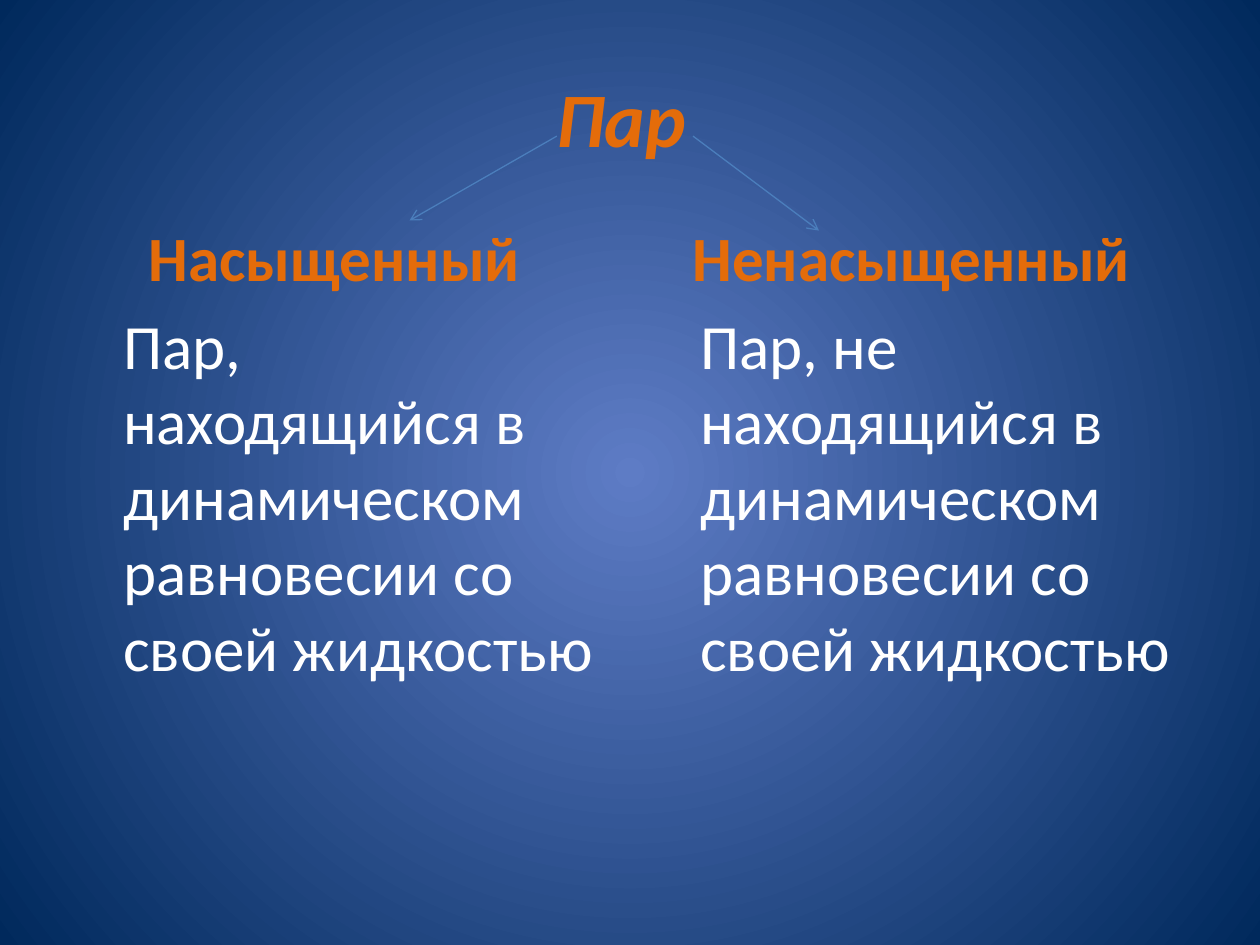
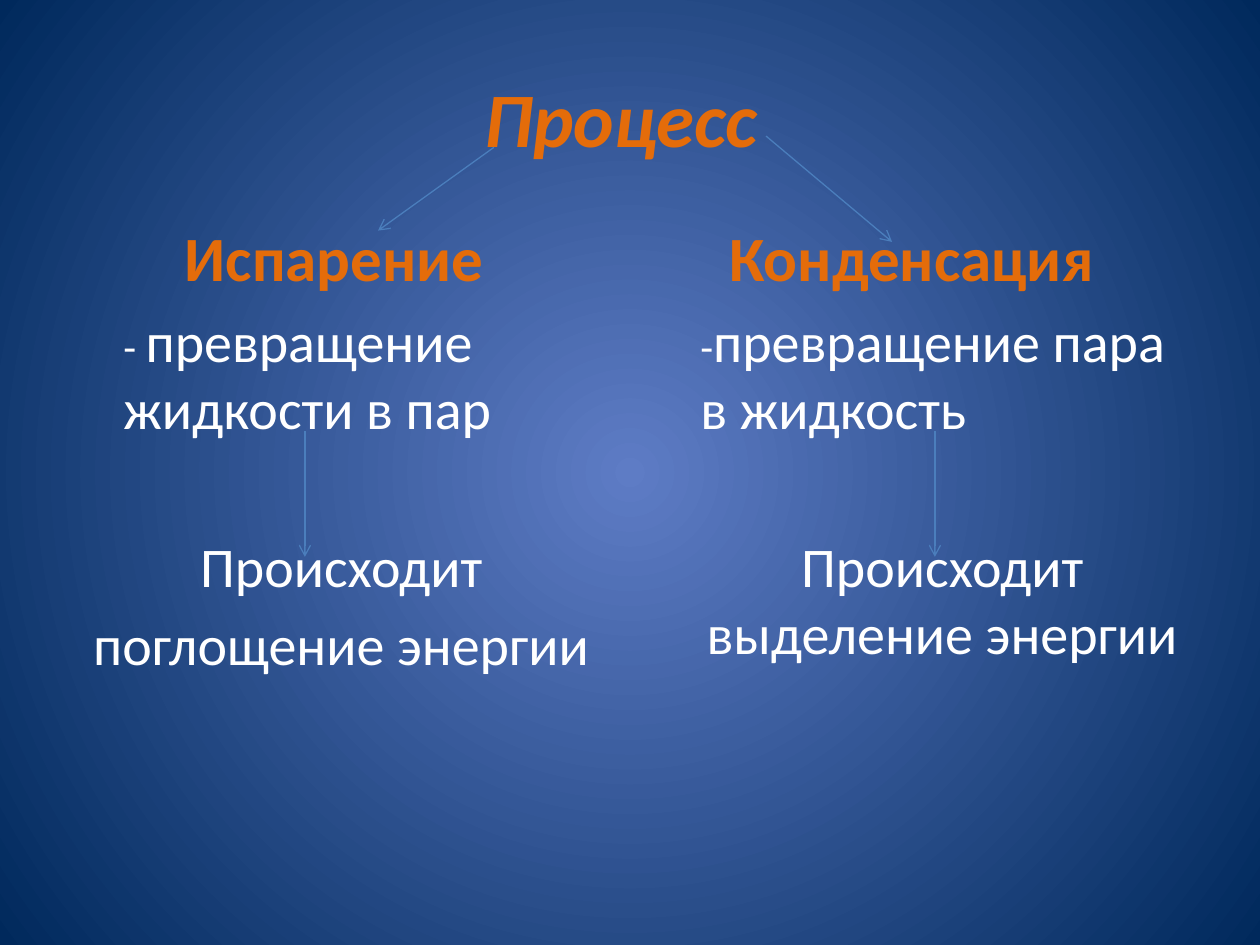
from dataclasses import dataclass

import lxml.etree
import pptx
import pptx.dml.color
import pptx.enum.shapes
import pptx.enum.text
import pptx.oxml.ns
import pptx.util

Inches = pptx.util.Inches
Pt = pptx.util.Pt
qn = pptx.oxml.ns.qn
ALIGN = pptx.enum.text.PP_ALIGN
ANCHOR = pptx.enum.text.MSO_ANCHOR

COLOURS = {
    "centre": "5E7CC5",
    "edge": "00295C",
    "accent": "E46C0A",
    "text": "FFFFFF",
    "arrow": "4B7EBC",
}
FONT = "Calibri"
TITLE_ONLY = 5
COLUMN_LEFTS = (0.5, 5.08)
COLUMN_WIDTH = 4.42
HEADING_TOP, HEADING_HEIGHT = 1.68, 0.7
BODY_TOP, BODY_HEIGHT = 2.38, 4.32
INDENT = 0.38


@dataclass(frozen=True)
class Line:
    text: str
    size: int
    dash: str = ""
    centred: bool = False
    indent: float = INDENT
    after_gap: bool = False


@dataclass(frozen=True)
class Column:
    heading: str
    lines: tuple[Line, ...]


@dataclass(frozen=True)
class Arrow:
    start: tuple[float, float]
    end: tuple[float, float]


@dataclass(frozen=True)
class Scheme:
    title: str
    columns: tuple[Column, Column]
    arrows: tuple[Arrow, ...]


SCHEMES = (
    Scheme(
        "Пар ",
        (
            Column("Насыщенный ", (
                Line("Пар, находящийся в динамическом равновесии со своей жидкостью", 36),
            )),
            Column("Ненасыщенный ", (
                Line("Пар, не находящийся в динамическом равновесии со своей жидкостью", 36),
            )),
        ),
        (
            Arrow((4.42, 1.08), (3.25, 1.75)),
            Arrow((5.5, 1.08), (6.5, 1.83)),
        ),
    ),
    Scheme(
        "Процесс ",
        (
            Column("Испарение ", (
                Line("превращение жидкости в пар", 32, dash="- "),
                Line("Происходит", 32, centred=True, indent=0, after_gap=True),
                Line("поглощение энергии", 32, centred=True, indent=0),
            )),
            Column("Конденсация ", (
                Line("превращение пара в жидкость", 32, dash="-"),
                Line("Происходит выделение энергии", 32, centred=True, after_gap=True),
            )),
        ),
        (
            Arrow((2.42, 3.42), (2.42, 4.42)),
            Arrow((7.42, 3.42), (7.42, 4.42)),
            Arrow((3.92, 1.17), (3, 1.83)),
            Arrow((6.08, 1.08), (7.08, 1.92)),
        ),
    ),
)


def rgb(name: str) -> pptx.dml.color.RGBColor:
    return pptx.dml.color.RGBColor.from_string(COLOURS[name])


def add_span(para, text: str, *, size: float, colour: str = "text",
             bold: bool = False, italic: bool = False) -> None:
    span = para.add_run()
    span.text = text
    span.font.name = FONT
    span.font.size = Pt(size)
    span.font.bold = bold
    span.font.italic = italic
    span.font.color.rgb = rgb(colour)


def paint_background(master) -> None:
    fill = master.background.fill
    fill.gradient()
    for stop, name in zip(fill.gradient_stops, ("centre", "edge")):
        stop.color.rgb = rgb(name)
    gradient = master.element.find(".//" + qn("a:gradFill"))
    gradient.remove(gradient.find(qn("a:lin")))
    circle = lxml.etree.SubElement(gradient, qn("a:path"), path="circle")
    lxml.etree.SubElement(circle, qn("a:fillToRect"),
                          {side: "50000" for side in "ltrb"})


def add_title(page, text: str) -> None:
    title = page.shapes.title
    title.left, title.top = Inches(0.5), Inches(0.3)
    title.width, title.height = Inches(9), Inches(1.25)
    title.text_frame.vertical_anchor = ANCHOR.MIDDLE
    para = title.text_frame.paragraphs[0]
    para.alignment = ALIGN.CENTER
    add_span(para, text, size=44, colour="accent", bold=True, italic=True)


def add_frame(page, left: float, top: float, height: float, anchor):
    box = page.shapes.add_textbox(Inches(left), Inches(top),
                                  Inches(COLUMN_WIDTH), Inches(height))
    box.text_frame.word_wrap = True
    box.text_frame.vertical_anchor = anchor
    return box.text_frame


def add_column(page, left: float, column: Column) -> None:
    frame = add_frame(page, left, HEADING_TOP, HEADING_HEIGHT, ANCHOR.BOTTOM)
    para = frame.paragraphs[0]
    para.alignment = ALIGN.CENTER
    add_span(para, column.heading, size=36, colour="accent", bold=True)

    frame = add_frame(page, left, BODY_TOP, BODY_HEIGHT, ANCHOR.TOP)
    for index, line in enumerate(column.lines):
        para = frame.add_paragraph() if index else frame.paragraphs[0]
        para.alignment = ALIGN.CENTER if line.centred else ALIGN.LEFT
        para.space_before = Pt(52 if line.after_gap else 0.2 * line.size)
        para._p.get_or_add_pPr().set("marL", str(Inches(line.indent)))
        if line.dash:
            add_span(para, line.dash, size=24)
        add_span(para, line.text, size=line.size)


def add_arrow(page, arrow: Arrow) -> None:
    connector = page.shapes.add_connector(
        pptx.enum.shapes.MSO_CONNECTOR.STRAIGHT,
        *(Inches(value) for value in arrow.start + arrow.end))
    connector.line.color.rgb = rgb("arrow")
    connector.line.width = Pt(0.75)
    properties = connector.element.spPr
    lxml.etree.SubElement(properties.find(qn("a:ln")), qn("a:tailEnd"), type="arrow")
    lxml.etree.SubElement(properties, qn("a:effectLst"))


def main() -> None:
    deck = pptx.Presentation()
    deck.slide_width, deck.slide_height = Inches(10), Inches(7.5)
    paint_background(deck.slide_master)
    for scheme in SCHEMES:
        page = deck.slides.add_slide(deck.slide_layouts[TITLE_ONLY])
        add_title(page, scheme.title)
        for left, column in zip(COLUMN_LEFTS, scheme.columns):
            add_column(page, left, column)
        for arrow in scheme.arrows:
            add_arrow(page, arrow)
    deck.save("out.pptx")


if __name__ == "__main__":
    main()
